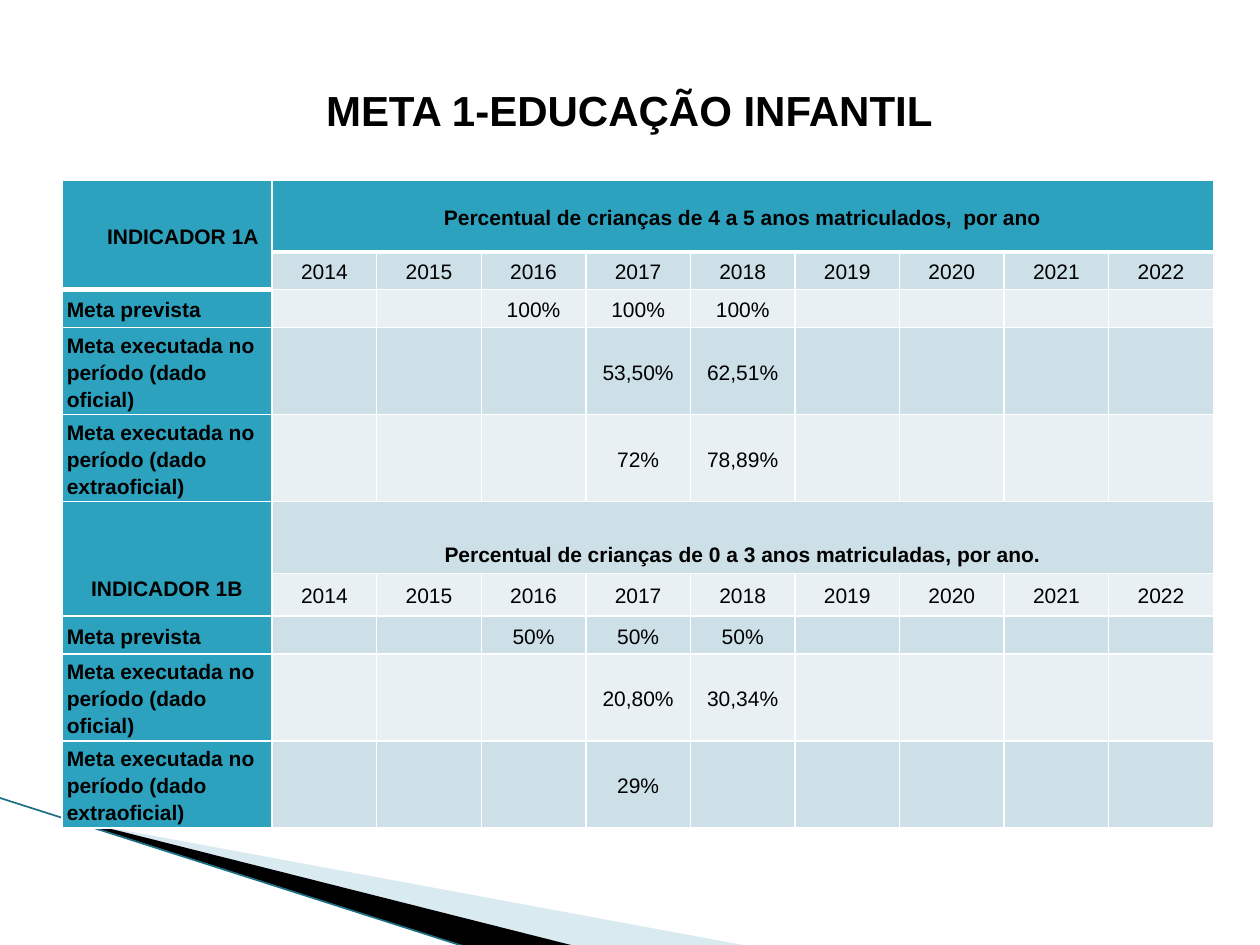
from lxml import etree
from pptx import Presentation
from pptx.dml.color import RGBColor
from pptx.enum.shapes import MSO_CONNECTOR
from pptx.enum.text import MSO_ANCHOR, PP_ALIGN
from pptx.oxml import parse_xml
from pptx.oxml.ns import nsdecls, qn
from pptx.util import Inches, Pt

COLORS = {
    "teal": "2DA2BF", "band": "CDE0E8", "light": "E8F0F4", "wedge": "A0CBDC",
    "edge": "1C6F85", "black": "000000", "white": "FFFFFF",
}
YEARS = [str(year) for year in range(2014, 2023)]
OFFICIAL = "Meta executada no período (dado oficial)"
UNOFFICIAL = "Meta executada no período (dado extraoficial)"


def rgb(name):
    return RGBColor.from_string(COLORS[name])


def style_cell(cell, fill, bold, align, bottom_width):
    props = cell._tc.get_or_add_tcPr()
    for side in "LRTB":
        width = Pt(bottom_width if side == "B" else 1)
        props.append(parse_xml(
            f'<a:ln{side} {nsdecls("a")} w="{width}"><a:solidFill>'
            f'<a:srgbClr val="{COLORS["white"]}"/></a:solidFill></a:ln{side}>'))
    cell.fill.solid()
    cell.fill.fore_color.rgb = rgb(fill)
    cell.margin_left = cell.margin_right = Inches(0.04)
    cell.margin_top = cell.margin_bottom = 0
    cell.vertical_anchor = MSO_ANCHOR.MIDDLE
    paragraph = cell.text_frame.paragraphs[0]
    paragraph.alignment = align
    paragraph.line_spacing = 1.15
    font = paragraph.font
    font.name, font.size, font.bold = "Arial", Pt(12), bold
    font.color.rgb = rgb("black")


prs = Presentation()
prs.slide_width, prs.slide_height = Inches(10), Inches(7.5)
slide = prs.slides.add_slide(prs.slide_layouts[6])

# Corner decoration: two wedges and a thin edge line
wedges = [
    ("wedge", 40, [(0.55, 6.51), (5.95, 7.51), (4.56, 7.51), (0.55, 6.5)]),
    ("black", 100, [(0.53, 6.49), (4.57, 7.51), (3.72, 7.52), (0.54, 6.5)]),
]
for color, opacity, points in wedges:
    corners = [(Inches(x), Inches(y)) for x, y in points]
    builder = slide.shapes.build_freeform(*corners[0])
    builder.add_line_segments(corners[1:], close=True)
    wedge = builder.convert_to_shape()
    wedge.shadow.inherit = False
    wedge.line.fill.background()
    wedge.fill.solid()
    wedge.fill.fore_color.rgb = rgb(color)
    if opacity < 100:
        tint = wedge.fill._xPr.find(".//" + qn("a:srgbClr"))
        etree.SubElement(tint, qn("a:alpha")).set("val", str(opacity * 1000))

edge = slide.shapes.add_connector(
    MSO_CONNECTOR.STRAIGHT, Inches(-0.01), Inches(6.33), Inches(3.71), Inches(7.52))
edge.line.color.rgb = rgb("edge")
edge.line.width = Pt(0.95)
etree.SubElement(edge._element.spPr, qn("a:effectLst"))

# Title
title = slide.shapes.add_textbox(Inches(0.43), Inches(0.62), Inches(9.13), Inches(0.5))
title.text_frame.word_wrap = True
heading = title.text_frame.paragraphs[0]
heading.text = "META 1-EDUCAÇÃO INFANTIL"
heading.alignment = PP_ALIGN.CENTER
heading.font.name, heading.font.size, heading.font.bold = "Arial", Pt(24), True
heading.font.color.rgb = rgb("black")

# Table content: label, then the values by year
rows = [
    ["INDICADOR 1A", "Percentual de crianças de 4 a 5 anos matriculados,  por ano"],
    ["", *YEARS],
    ["Meta prevista", "", "", "100%", "100%", "100%"],
    [OFFICIAL, "", "", "", "53,50%", "62,51%"],
    [UNOFFICIAL, "", "", "", "72%", "78,89%"],
    ["INDICADOR 1B", "Percentual de crianças de 0 a 3 anos matriculadas, por ano."],
    ["", *YEARS],
    ["Meta prevista", "", "", "50%", "50%", "50%"],
    [OFFICIAL, "", "", "", "20,80%", "30,34%"],
    [UNOFFICIAL, "", "", "", "29%"],
]
row_heights = [0.57, 0.3, 0.3, 0.69, 0.69, 0.57, 0.34, 0.3, 0.69, 0.69]
header_rows = (0, 5)

goals = slide.shapes.add_table(
    len(rows), 10, Inches(0.49), Inches(1.43), Inches(9.16), Inches(5.14)).table
goals.first_row = goals.horz_banding = False
for col, column in enumerate(goals.columns):
    column.width = Inches(0.83 if col else 1.67)

for row, values in enumerate(rows):
    goals.rows[row].height = Inches(row_heights[row])
    for col in range(10):
        cell = goals.cell(row, col)
        if col < len(values):
            cell.text = values[col]
        is_label = col == 0
        fill = "teal" if is_label or row == 0 else "band" if row % 2 else "light"
        centred = not is_label or row in header_rows
        thick = row == 0 or (row == 1 and is_label)
        style_cell(cell, fill, is_label or row in header_rows,
                   PP_ALIGN.CENTER if centred else PP_ALIGN.LEFT, 3 if thick else 1)

# Header cells span two rows on the left and all the years on the right
for row in header_rows:
    goals.cell(row, 0).merge(goals.cell(row + 1, 0))
    goals.cell(row, 1).merge(goals.cell(row, 9))
indicator_a = goals.cell(0, 0)
indicator_a.text_frame.paragraphs[0].alignment = PP_ALIGN.LEFT
indicator_a.margin_left = Inches(0.36)
for col, gap in enumerate((0.12, 0.05)):
    header_b = goals.cell(5, col)
    header_b.vertical_anchor = MSO_ANCHOR.BOTTOM
    header_b.margin_bottom = Inches(gap)

prs.save("out.pptx")
